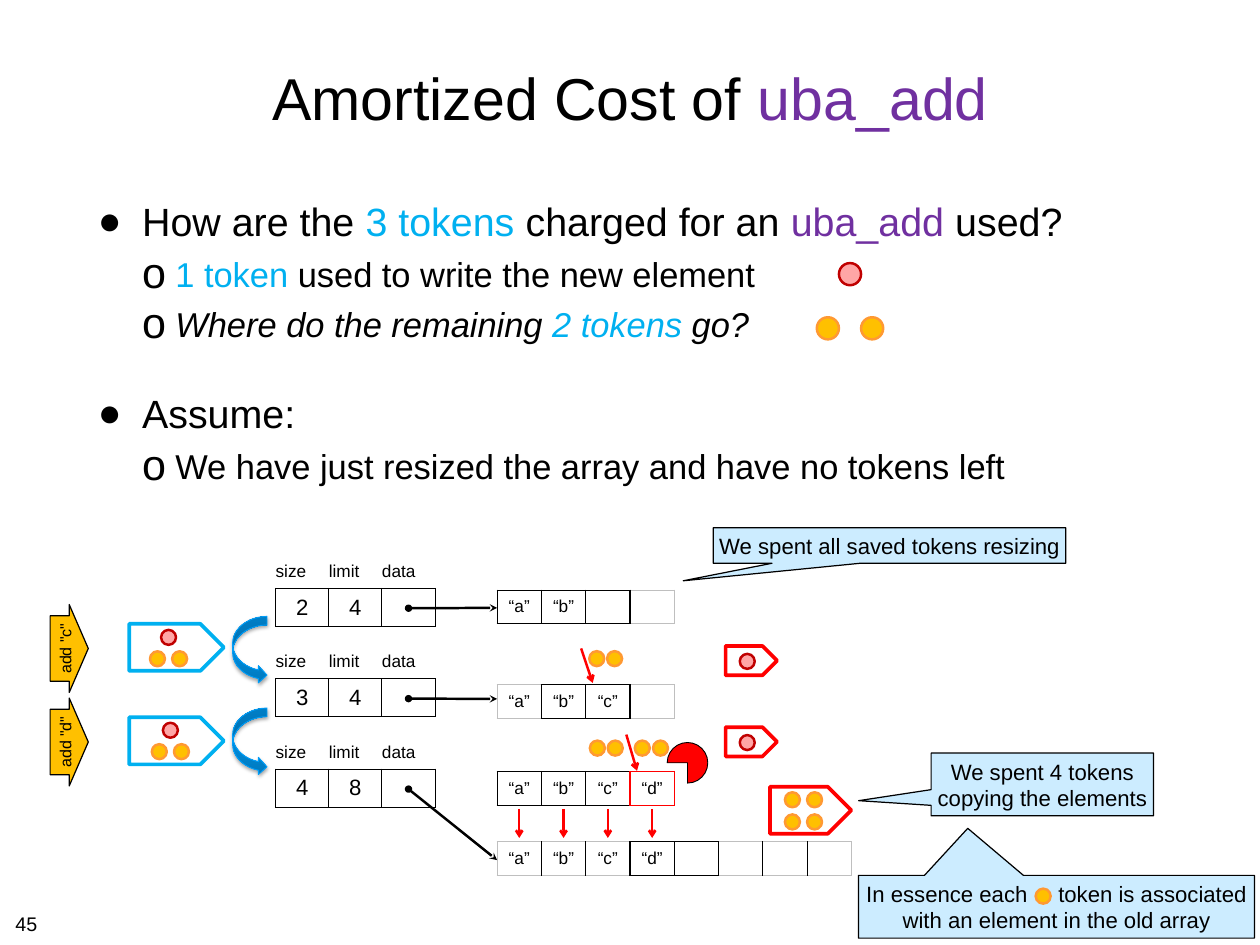
from lxml.etree import SubElement
from pptx import Presentation
from pptx.dml.color import RGBColor
from pptx.enum.shapes import MSO_CONNECTOR as Connector, MSO_SHAPE as Preset
from pptx.enum.text import MSO_ANCHOR as Anchor, PP_ALIGN as Align
from pptx.oxml.ns import qn
from pptx.util import Pt

BLACK, RED, GRAY = "000000", "FF0000", "BFBFBF"
CYAN, PURPLE = "00B0F0", "7030A0"
GOLD, ORANGE, DARK_RED, PALE_BLUE = "FFC000", "FF9933", "C00000", "CCECFF"
PLAIN_TABLE = "{2D5ABB26-0587-4C30-8999-92F81FD0307C}"


def color(value):
    return RGBColor.from_string(value)


def add_xml(parent, tag, **attributes):
    return SubElement(parent, qn(tag), attributes)


class Board:
    font = "Arial"

    def __init__(self, slide):
        self.slide = slide

    def run(self, paragraph, text, size, shade=BLACK, italic=False, gap=0):
        run = paragraph.add_run()
        run.text = text
        run.font.name, run.font.size = self.font, Pt(size)
        run.font.color.rgb = color(shade)
        if italic:
            run.font.italic = True
        if gap:
            run._r.get_or_add_rPr().set("spc", str(gap * 100))

    def frame(self, shape, inset, anchor=Anchor.TOP, wrap=True):
        frame = shape.text_frame
        frame.margin_left = frame.margin_right = Pt(inset)
        frame.margin_top = frame.margin_bottom = Pt(inset)
        frame.vertical_anchor, frame.word_wrap = anchor, wrap
        return frame

    def text_box(self, x, y, width, height, anchor=Anchor.TOP, wrap=True):
        box = self.slide.shapes.add_textbox(Pt(x), Pt(y), Pt(width), Pt(height))
        return self.frame(box, 4.5, anchor, wrap)

    def bullet(self, paragraph, symbol, left, hanging, before, scale=100):
        paragraph.space_before = Pt(before)
        properties = paragraph._p.get_or_add_pPr()
        properties.set("marL", str(Pt(left)))
        properties.set("indent", str(-Pt(hanging)))
        mark = add_xml(properties, "a:buClr")
        add_xml(mark, "a:srgbClr", val=BLACK)
        add_xml(properties, "a:buSzPct", val=str(scale * 1000))
        add_xml(properties, "a:buFont", typeface=self.font)
        add_xml(properties, "a:buChar", char=symbol)

    def shape(self, preset, x, y, width, height, fill=None, line=BLACK, weight=1, adjust=()):
        shape = self.slide.shapes.add_shape(preset, Pt(x), Pt(y), Pt(width), Pt(height))
        shape.shadow.inherit = False
        if fill:
            shape.fill.solid()
            shape.fill.fore_color.rgb = color(fill)
        else:
            shape.fill.background()
        shape.line.color.rgb, shape.line.width = color(line), Pt(weight)
        for index, value in enumerate(adjust):
            shape.adjustments[index] = value
        return shape

    def gold_token(self, x, y, size=12.2):
        self.shape(Preset.OVAL, x - size / 2, y - size / 2, size, size, GOLD, ORANGE, 2)

    def red_token(self, x, y, size=12.2):
        token = self.shape(Preset.OVAL, x - size / 2, y - size / 2, size, size, RED, DARK_RED, 2)
        shade = token._element.spPr.find(qn("a:solidFill")).find(qn("a:srgbClr"))
        add_xml(shade, "a:alpha", val="35000")

    def plate(self, x, y, width, height, line):
        self.shape(Preset.PENTAGON, x, y, width, height, None, line, 3)

    def callout(self, x, y, width, height, tip, lines):
        shape = self.shape(Preset.RECTANGULAR_CALLOUT, x, y, width, height, PALE_BLUE, adjust=tip)
        frame = self.frame(shape, 3.6, Anchor.MIDDLE, False)
        for index, pieces in enumerate(lines):
            paragraph = frame.add_paragraph() if index else frame.paragraphs[0]
            paragraph.alignment = Align.CENTER
            for text, gap in pieces:
                self.run(paragraph, text, 18, gap=gap)

    def add_arrow(self, y, text):
        arrow = self.shape(Preset.DOWN_ARROW, 20.5, y, 71.5, 31, GOLD, adjust=(0.744, 0.5))
        arrow.rotation = 270
        frame = self.frame(arrow, 4.5, Anchor.MIDDLE, False)
        frame.margin_bottom = 0
        frame.paragraphs[0].alignment = Align.CENTER
        self.run(frame.paragraphs[0], text, 13)

    def curved_arrow(self, x, y):
        arrow = self.shape(Preset.CURVED_RIGHT_ARROW, x, y, 28, 54.7, line="009EF9", weight=0.75)
        arrow.fill.gradient()
        arrow.fill.gradient_angle = 90
        for stop, shade in zip(arrow.fill.gradient_stops, ("0079BE", "009EF8")):
            stop.color.rgb = color(shade)
        effects = arrow._element.spPr.find(qn("a:effectLst"))
        shadow = add_xml(effects, "a:outerShdw", blurRad=str(Pt(3.1)), dist=str(Pt(1.8)),
                         dir="5400000", rotWithShape="0")
        add_xml(add_xml(shadow, "a:srgbClr", val=BLACK), "a:alpha", val="35000")

    def line(self, start, end, shade=RED, head=None, tail="arrow"):
        x1, y1, x2, y2 = map(Pt, start + end)
        line = self.slide.shapes.add_connector(Connector.STRAIGHT, x1, y1, x2, y2)
        line.line.color.rgb, line.line.width = color(shade), Pt(2)
        outline = line.line._get_or_add_ln()
        if head:
            add_xml(outline, "a:headEnd", type=head)
        add_xml(outline, "a:tailEnd", type=tail)
        add_xml(line._element.spPr, "a:effectLst")

    def table(self, x, y, width, heights, columns):
        graphic = self.slide.shapes.add_table(len(heights), columns, Pt(x), Pt(y),
                                              Pt(width * columns), Pt(sum(heights)))
        table = graphic.table
        table.first_row = table.horz_banding = False
        table._tbl.tblPr.find(qn("a:tableStyleId")).text = PLAIN_TABLE
        for column in table.columns:
            column.width = Pt(width)
        for row, height in zip(table.rows, heights):
            row.height = Pt(height)
        return table

    def cell(self, cell, text, size, edges, align=Align.CENTER, anchor=Anchor.MIDDLE):
        cell.margin_left = cell.margin_right = cell.margin_top = cell.margin_bottom = 0
        cell.vertical_anchor = anchor
        for side in "LRTB":
            if side in edges:
                border = add_xml(cell._tc.get_or_add_tcPr(), "a:ln" + side, w=str(Pt(1)))
                add_xml(add_xml(border, "a:solidFill"), "a:srgbClr", val=edges[side])
        cell.fill.background()
        if text:
            paragraph = cell.text_frame.paragraphs[0]
            paragraph.alignment = align
            self.run(paragraph, text, size)

    def record(self, y, size, limit):
        table = self.table(224, y, 43.2, (21.6, 31), 3)
        for index, (name, value) in enumerate(zip(("size", "limit", "data"), (size, limit, ""))):
            self.cell(table.cell(0, index), name, 14, {}, Align.LEFT, Anchor.TOP)
            self.cell(table.cell(1, index), value, 18, dict.fromkeys("LRTB", BLACK))

    def array(self, y, letters, shades):
        table = self.table(404, y, 36, (27.4,), len(shades))
        for index, shade in enumerate(shades):
            text = f"“{letters[index]}”" if index < len(letters) else ""
            left = shade if index == 0 or shade == RED else BLACK
            edges = {"L": left, "T": shade, "B": shade}
            if index == len(shades) - 1:
                edges["R"] = shade
            self.cell(table.cell(0, index), text, 14, edges)


def main():
    presentation = Presentation()
    presentation.slide_width, presentation.slide_height = Pt(1024), Pt(768)
    board = Board(presentation.slides.add_slide(presentation.slide_layouts[6]))

    # Title
    title = board.text_box(75, 20, 874, 118, Anchor.MIDDLE).paragraphs[0]
    title.alignment = Align.CENTER
    board.run(title, "Amortized Cost of ", 48)
    board.run(title, "uba_add", 48, PURPLE)

    # Bulleted text: level, space before, italic, runs
    body = board.text_box(75, 156, 881, 270)
    points = [
        (0, 8, False, [("How are the ", BLACK), ("3 tokens ", CYAN), ("charged for an ", BLACK),
                       ("uba_add", PURPLE), (" used?", BLACK)]),
        (1, 7, False, [("1 token ", CYAN), ("used to write the new element", BLACK)]),
        (1, 7, True, [("Where do the remaining ", BLACK), ("2 tokens", CYAN), (" go?", BLACK)]),
        (0, 36, False, [("Assume:", BLACK)]),
        (1, 7, False, [("We have just resized the array and have no tokens left", BLACK)]),
    ]
    for index, (level, before, italic, runs) in enumerate(points):
        paragraph = body.add_paragraph() if index else body.paragraphs[0]
        mark = ("o", 63, 27, before, 125) if level else ("●", 36, 36, before)
        board.bullet(paragraph, *mark)
        for text, shade in runs:
            board.run(paragraph, text, 28 if level else 32, shade, italic)

    # Arrays and the records that point to them
    board.array(479.5, "ab", [BLACK] * 3 + [GRAY])
    board.array(556.5, "abc", [GRAY] + [BLACK] * 2 + [GRAY])
    board.array(627, "abcd", [BLACK] * 3 + [RED])
    board.array(684, "abcd", [GRAY] * 3 + [BLACK] * 2 + [GRAY] * 3)
    for top, size, limit, target in ((456.5, "2", "4", 494), (530, "3", "4", 568), (603.5, "4", "8", 699)):
        board.record(top, size, limit)
        board.line((332, top + 37.8), (404, target), BLACK, "oval", "stealth")

    # Add operations with their three tokens
    for top, text, x, y in ((511.5, 'add "c"', 137, 518), (587.5, 'add "d"', 138.5, 593.5)):
        board.add_arrow(top, text)
        board.plate(105, top - 4.5, 77, 38.2, CYAN)
        board.red_token(x, y)
        for side in (-9, 9):
            board.gold_token(x + side, y + 17.4)
    for top in (501, 575.5):
        board.curved_arrow(189, top)

    # Spent tokens
    for top in (525, 591):
        board.plate(589.7, top, 41.8, 23.8, RED)
        board.red_token(607.3, top + 12.5)
    board.plate(625.7, 639.4, 66.2, 38.2, RED)
    for x in (644, 662):
        for y in (650, 668):
            board.gold_token(x, y)

    # Saved tokens, new elements and copying
    saved = [(485, 535.3), (499.5, 535.3), (485.5, 608), (500, 608), (522, 608), (536.8, 608)]
    for x, y in saved:
        board.gold_token(x, y)
    pie = board.shape(Preset.PIE, 542.2, 603.4, 33, 33, RED, weight=0.75)
    pie.rotation = 180
    board.line((472.3, 527), (481.7, 555))
    board.line((509, 597), (517.7, 626.4))
    for index in range(4):
        x = 422 + 36 * index
        board.line((x, 657.4), (x, 681))

    # Tokens beside the bullets
    board.red_token(690.8, 222.8, 18)
    for x in (672.8, 708.8):
        board.gold_token(x, 266.8, 18)

    # Callouts
    board.callout(579.6, 429, 286.6, 28.8, (-0.585, 0.995), [[("We spent all saved tokens resizing", 0)]])
    board.callout(756.7, 612, 180.7, 51, (-0.826, 0.259),
                  [[("We spent 4 tokens", 0)], [("copying the elements", 0)]])
    board.callout(697.7, 711.4, 321.8, 51, (-0.224, -1.25),
                  [[("In essence each", 0), (" ", 20), ("token is associated", 0)],
                   [("with an element in the old array", 0)]])
    board.gold_token(847.8, 728.3)

    # Slide number
    number = board.text_box(8, 736.5, 27, 25, wrap=False)
    board.run(number.paragraphs[0], "45", 16)

    presentation.save("out.pptx")


if __name__ == "__main__":
    main()
